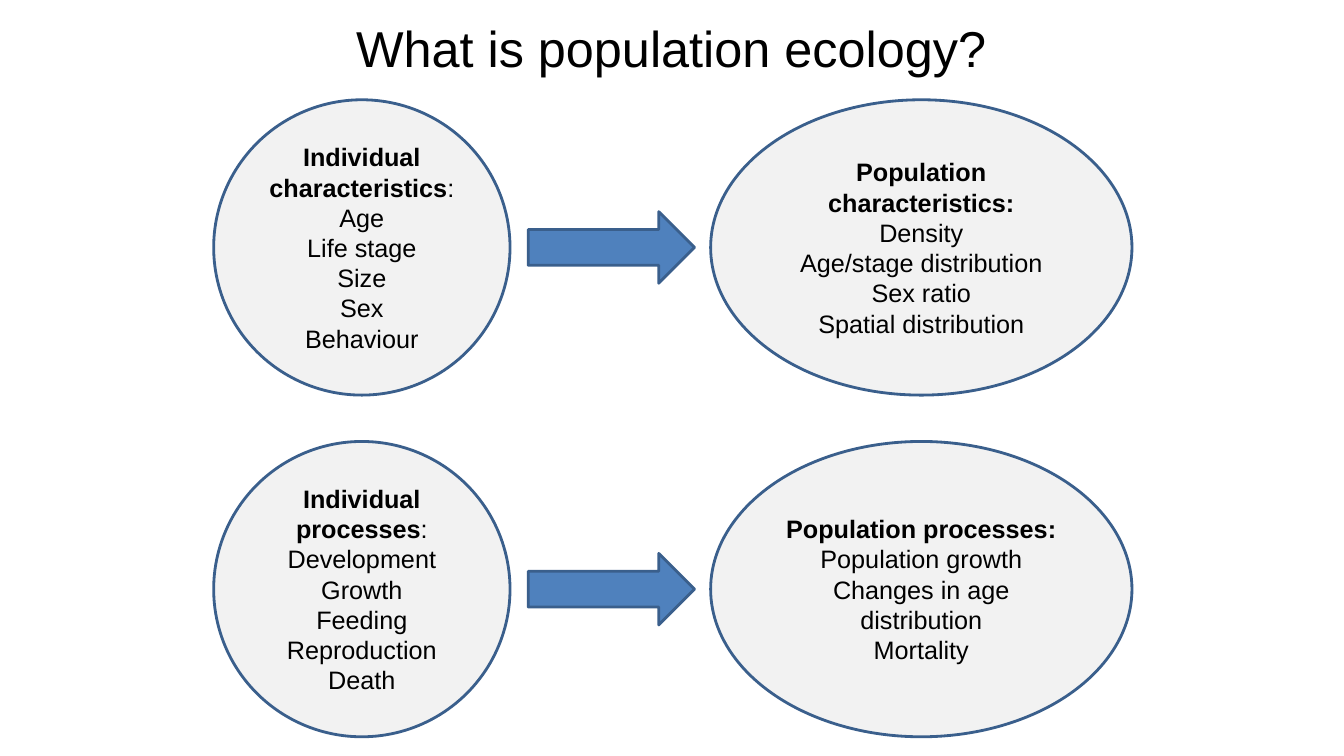
from dataclasses import dataclass

import pptx
import pptx.dml.color
import pptx.enum.shapes
import pptx.enum.text
import pptx.util

Pt = pptx.util.Pt
MSO_SHAPE = pptx.enum.shapes.MSO_SHAPE

OUTLINE = "3A5F8C"
ROW_TOPS = (71.28, 315.36)
ROW_HEIGHT = 210.96
ARROW_HEIGHT = 51.12


@dataclass(frozen=True)
class Column:
    left: float
    width: float


@dataclass(frozen=True)
class Topic:
    heading: str
    colon_bold: bool
    examples: tuple[str, ...]


INDIVIDUAL = Column(152.64, 211.68)
LEADS_TO = Column(377.28, 118.8)
POPULATION = Column(507.6, 300.96)

ROWS = (
    (
        Topic("Individual characteristics", False,
              ("Age", "Life stage", "Size", "Sex", "Behaviour")),
        Topic("Population characteristics", True,
              ("Density", "Age/stage distribution", "Sex ratio", "Spatial distribution")),
    ),
    (
        Topic("Individual processes", False,
              ("Development", "Growth", "Feeding", "Reproduction", "Death")),
        Topic("Population processes", True,
              ("Population growth", "Changes in age distribution", "Mortality")),
    ),
)


def rgb(hex_color: str) -> pptx.dml.color.RGBColor:
    return pptx.dml.color.RGBColor.from_string(hex_color)


def write(paragraph, text: str, *, size: float = 18, bold: bool = False,
          color: str = "000000", font: str = "Arial") -> None:
    paragraph.alignment = pptx.enum.text.PP_ALIGN.CENTER
    run = paragraph.add_run()
    run.text = text
    run.font.name = font
    run.font.size = Pt(size)
    run.font.bold = bold
    run.font.color.rgb = rgb(color)


def draw(slide, preset, column: Column, top: float, height: float, fill: str):
    shape = slide.shapes.add_shape(
        preset, Pt(column.left), Pt(top), Pt(column.width), Pt(height))
    shape.shadow.inherit = False
    shape.fill.solid()
    shape.fill.fore_color.rgb = rgb(fill)
    shape.line.color.rgb = rgb(OUTLINE)
    shape.line.width = Pt(2)
    return shape


def draw_topic(slide, topic: Topic, column: Column, top: float) -> None:
    oval = draw(slide, MSO_SHAPE.OVAL, column, top, ROW_HEIGHT, "F2F2F2")
    frame = oval.text_frame
    frame.word_wrap = True
    frame.vertical_anchor = pptx.enum.text.MSO_ANCHOR.MIDDLE
    heading = frame.paragraphs[0]
    write(heading, topic.heading, bold=True)
    write(heading, ":", bold=topic.colon_bold)
    for example in topic.examples:
        write(frame.add_paragraph(), example)


def main() -> None:
    presentation = pptx.Presentation()
    presentation.slide_width = Pt(960)
    presentation.slide_height = Pt(540)
    slide = presentation.slides.add_slide(presentation.slide_layouts[5])

    title = slide.shapes.title
    title.left, title.top, title.width, title.height = Pt(155.52), Pt(0), Pt(648), Pt(66.96)
    title.text_frame.auto_size = pptx.enum.text.MSO_AUTO_SIZE.NONE
    title.text_frame.vertical_anchor = pptx.enum.text.MSO_ANCHOR.MIDDLE
    write(title.text_frame.paragraphs[0], "What is population ecology?", size=36)

    for top, (individual, population) in zip(ROW_TOPS, ROWS):
        draw_topic(slide, individual, INDIVIDUAL, top)
        draw_topic(slide, population, POPULATION, top)
        draw(slide, MSO_SHAPE.RIGHT_ARROW, LEADS_TO,
             top + (ROW_HEIGHT - ARROW_HEIGHT) / 2, ARROW_HEIGHT, "4F81BD")

    presentation.save("out.pptx")


if __name__ == "__main__":
    main()
